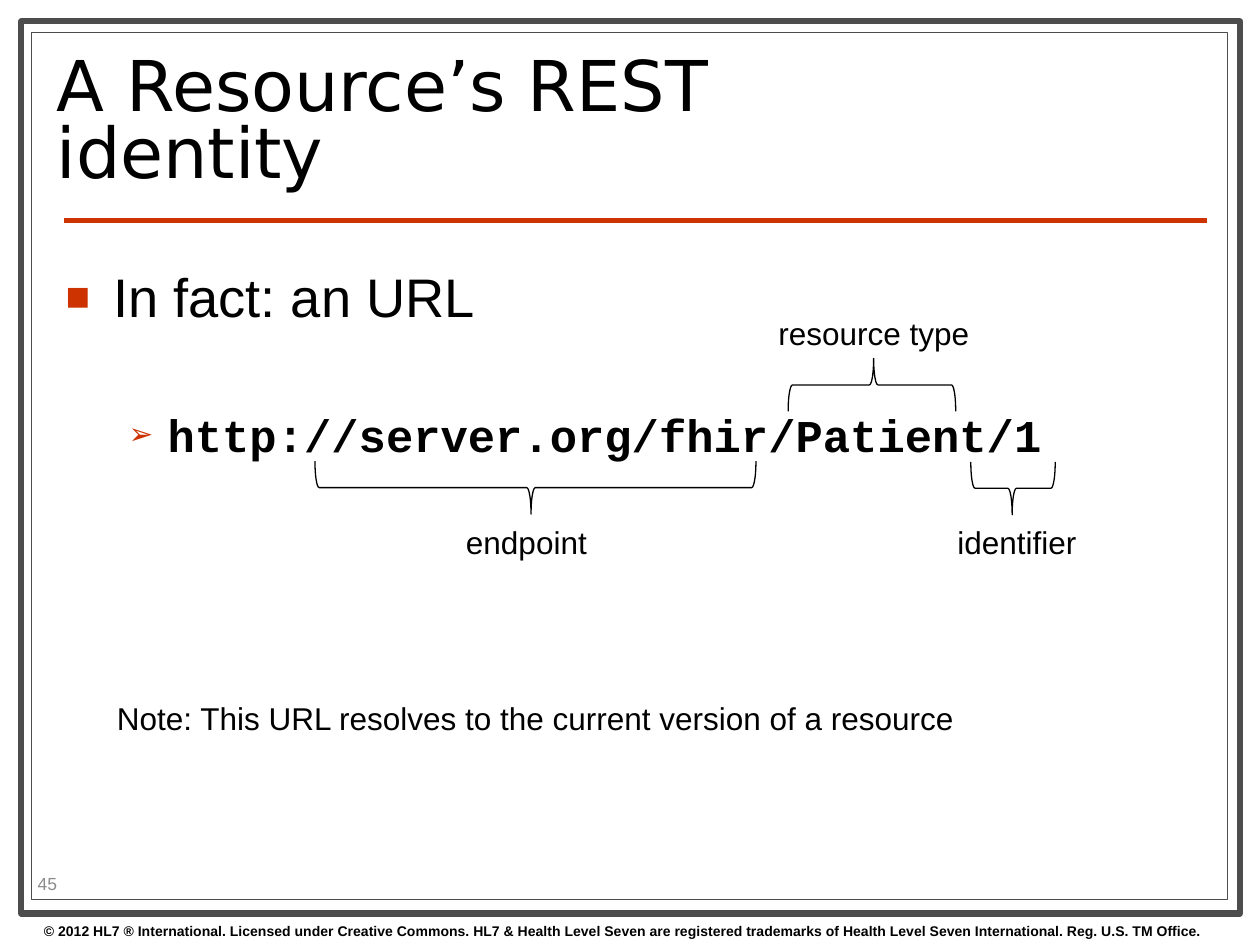
from dataclasses import dataclass

from lxml.etree import SubElement
from pptx import Presentation
from pptx.dml.color import RGBColor
from pptx.enum.shapes import MSO_CONNECTOR, MSO_SHAPE
from pptx.enum.text import MSO_ANCHOR, MSO_AUTO_SIZE, PP_ALIGN
from pptx.oxml.ns import qn
from pptx.util import Inches, Pt


@dataclass
class Theme:
    ink: str = "000000"
    paper: str = "FFFFFF"
    frame: str = "4D4D4D"
    accent: str = "CC3300"
    muted: str = "8C8C8C"
    sans: str = "Arial"
    mono: str = "Courier New"
    heading: str = "DejaVu Sans"
    title_size: int = 40
    lead_size: int = 31
    url_size: int = 26
    label_size: int = 18
    number_size: int = 10
    legal_size: int = 8


theme = Theme()


def write(para, text, size, font=theme.sans, color=theme.ink, bold=False):
    para.alignment = PP_ALIGN.LEFT
    span = para.add_run()
    span.text = text
    for name, value in {"name": font, "size": Pt(size), "bold": bold}.items():
        setattr(span.font, name, value)
    span.font.color.rgb = RGBColor.from_string(color)


def add_text(area, text, size, wrap=False, **style):
    box = page.shapes.add_textbox(*map(Inches, area))
    box.text_frame.word_wrap = wrap
    box.text_frame.vertical_anchor = MSO_ANCHOR.MIDDLE
    write(box.text_frame.paragraphs[0], text, size, **style)


deck = Presentation()
deck.slide_width, deck.slide_height = Inches(10), Inches(7.5)
page = deck.slides.add_slide(deck.slide_layouts[1])
title, body = page.placeholders

# Double frame, rule and legal line
for area, weight in [((0.17, 0.17, 9.67, 7.08), 3.5), ((0.25, 0.26, 9.49, 6.88), 0.75)]:
    frame = page.shapes.add_shape(MSO_SHAPE.RECTANGLE, *map(Inches, area))
    frame.shadow.inherit = False
    frame.fill.solid()
    frame.fill.fore_color.rgb = RGBColor.from_string(theme.paper)
    frame.line.color.rgb = RGBColor.from_string(theme.frame)
    frame.line.width = Pt(weight)

rule = page.shapes.add_connector(
    MSO_CONNECTOR.STRAIGHT, *map(Inches, (0.51, 1.75, 9.58, 1.75)))
rule.line.color.rgb = RGBColor.from_string(theme.accent)
rule.line.width = Pt(3)
SubElement(rule._element.spPr, qn("a:effectLst"))

add_text((0.25, 7.27, 10, 0.23),
         "© 2012 HL7 ® International. Licensed under Creative Commons. "
         "HL7 & Health Level Seven are registered trademarks of "
         "Health Level Seven International. Reg. U.S. TM Office.",
         theme.legal_size, wrap=True, bold=True)

# Title and list stand in front of the frame
for holder, area, anchor in [
    (title, (0.35, 0.36, 7.17, 1.26), MSO_ANCHOR.MIDDLE),
    (body, (0.42, 2, 9.17, 4.9), MSO_ANCHOR.TOP),
]:
    page.shapes._spTree.append(holder._element)
    holder.left, holder.top, holder.width, holder.height = map(Inches, area)
    holder.text_frame.auto_size = MSO_AUTO_SIZE.NONE
    holder.text_frame.vertical_anchor = anchor

heading = title.text_frame.paragraphs[0]
heading.line_spacing = 0.8
write(heading, "A Resource’s REST identity", theme.title_size, theme.heading)

body.text_frame.margin_top = Inches(0.09)
lead = body.text_frame.paragraphs[0]
url = body.text_frame.add_paragraph()
url.level = 1
for para, mark, percent, margin, indent, gap in [
    (lead, "■", 75, 0.38, -0.38, 0),
    (url, "➢", 65, 0.81, -0.31, 45),
]:
    para.space_before = Pt(gap)
    props = para._p.get_or_add_pPr()
    props.set("marL", str(Inches(margin)))
    props.set("indent", str(Inches(indent)))
    SubElement(SubElement(props, qn("a:buClr")), qn("a:srgbClr"), val=theme.accent)
    SubElement(props, qn("a:buSzPct"), val=str(percent * 1000))
    SubElement(props, qn("a:buFont"), typeface=theme.sans)
    SubElement(props, qn("a:buChar"), char=mark)
write(lead, "In fact: an URL", theme.lead_size)
write(url, "http://server.org/fhir/Patient/1", theme.url_size, theme.mono, bold=True)

add_text((0.2, 6.89, 0.79, 0.24), "45", theme.number_size, color=theme.muted)

# Braces over and under the parts of the URL, each with its label
for brace_area, turn, label, label_area in [
    ((4.04, 2.12, 0.42, 3.5), 270, "endpoint", (3.6, 4.1, 1.17, 0.4)),
    ((6.71, 2.39, 0.42, 1.33), 90, "resource type", (6.08, 2.44, 1.73, 0.4)),
    ((7.83, 3.54, 0.42, 0.67), 270, "identifier", (7.5, 4.1, 1.16, 0.4)),
]:
    brace = page.shapes.add_shape(MSO_SHAPE.LEFT_BRACE, *map(Inches, brace_area))
    brace.rotation = turn
    brace.adjustments[0], brace.adjustments[1] = 0.08, 0.49
    brace.shadow.inherit = False
    brace.fill.background()
    brace.line.color.rgb = RGBColor.from_string(theme.ink)
    brace.line.width = Pt(0.75)
    add_text(label_area, label, theme.label_size)

add_text((0.83, 5.5, 6.91, 0.4),
         "Note: This URL resolves to the current version of a resource",
         theme.label_size)

deck.save("out.pptx")
